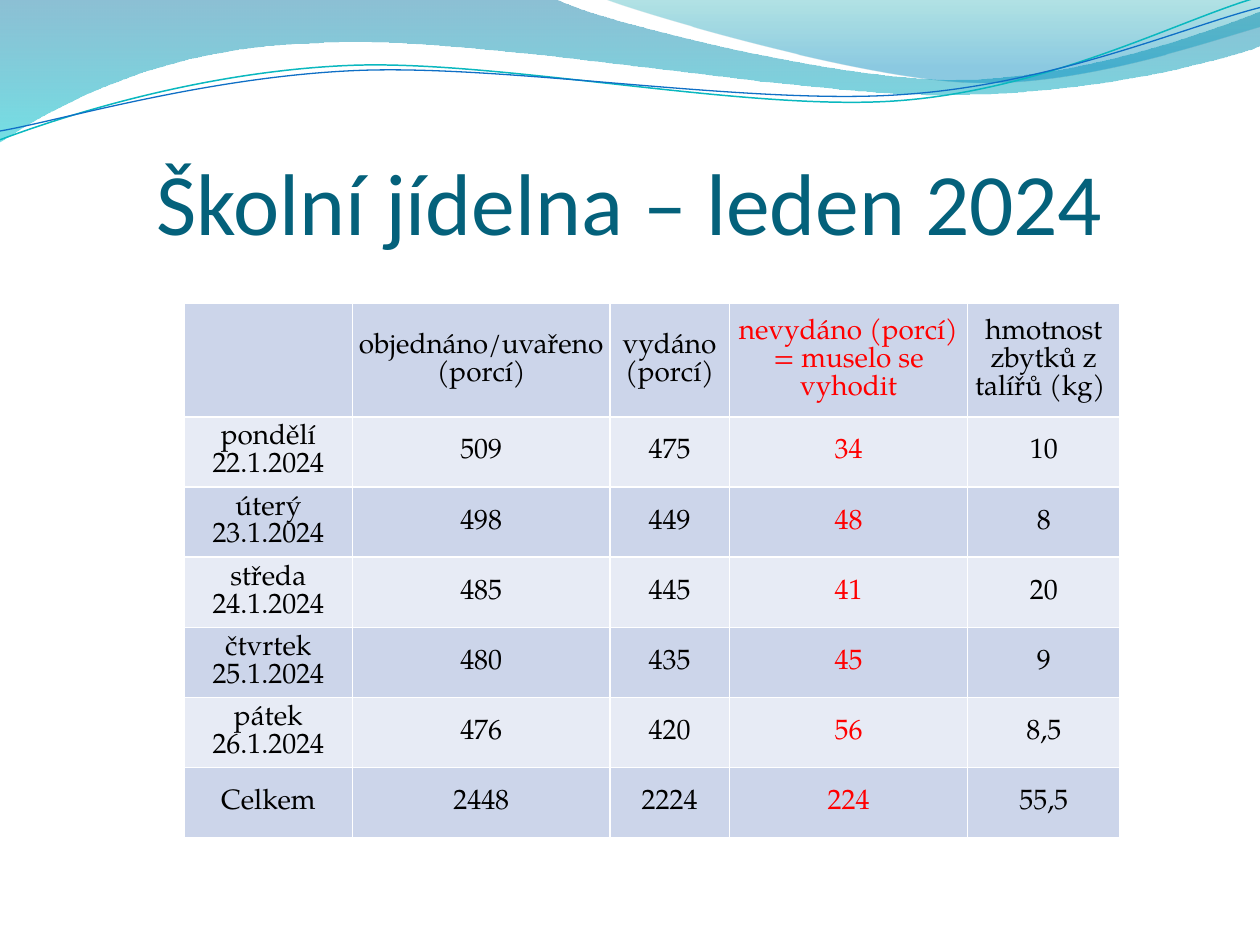
from dataclasses import dataclass

from lxml.etree import SubElement
from pptx import Presentation
from pptx.dml.color import RGBColor
from pptx.enum.text import MSO_ANCHOR as Anchor, PP_ALIGN as Align
from pptx.oxml.ns import qn
from pptx.util import Emu, Inches, Pt

# The slide is a grid of 10 columns by 7.5 rows of square modules.
MODULE = Inches(1)
SLIDE_COLS, SLIDE_ROWS = 10, 7.5

TITLE_FONT, TABLE_FONT = "Calibri", "TeX Gyre Pagella"
TITLE_COLOR, BLACK, RED, WHITE = "04617B", "000000", "FF0000", "FFFFFF"
BANDS = ("CCD5EA", "E7EBF5")

Point = tuple[float, float]


@dataclass(frozen=True)
class Stop:
    position: float
    color: str
    opacity: int


@dataclass(frozen=True)
class Wave:
    """Segments of one point are straight, those of three are cubic curves."""
    start: Point
    segments: tuple[tuple[Point, ...], ...]
    gradient: tuple[Stop, ...] = ()
    line_color: str = ""
    line_width: float = 0


WAVES = (
    Wave((0, 0),
         (((4.4, -0.01),),
          ((4.76, 0.17), (6.64, 0.63), (7.58, 0.63)),
          ((8.53, 0.63), (9.58, 0.26), (10, 0.09)),
          ((10.01, 0.36),),
          ((9.83, 0.44), (8.7, 0.76), (7.46, 0.75)),
          ((6.22, 0.75), (3.82, 0.28), (2.57, 0.34)),
          ((1.29, 0.36), (0.46, 0.83), (-0.01, 1.13)),
          ((0, 0),)),
         gradient=(Stop(0, "0074A1", 45), Stop(1, "00C6CF", 55))),
    Wave((4.79, -0.01),
         (((5.09, 0.11), (6.82, 0.62), (7.69, 0.65)),
          ((8.56, 0.69), (9.61, 0.32), (10, 0.21)),
          ((10, 0),),
          ((4.79, -0.01),)),
         gradient=(Stop(0, "00A1A9", 30), Stop(0.8, "008BBF", 45))),
    Wave((0, 1.11),
         (((0.48, 0.93), (1.58, 0.57), (2.77, 0.52)),
          ((3.95, 0.47), (5.93, 0.89), (7.13, 0.8)),
          ((8.33, 0.71), (9.38, 0.15), (9.98, -0.02))),
         line_color="0AB8BF", line_width=0.85),
    Wave((0, 1.04),
         (((0.47, 0.96), (1.64, 0.61), (2.83, 0.56)),
          ((4.03, 0.51), (5.97, 0.84), (7.17, 0.75)),
          ((8.36, 0.67), (9.41, 0.21), (10, 0.06))),
         line_color="0F6FC6", line_width=0.75),
)

COLUMN_WIDTHS = (1.34, 2.04, 0.95, 1.89, 1.21)
TABLE_HEIGHT, HEADER_HEIGHT = 4.24, 0.9
WASTED_COLUMN = 3
MEALS = (
    ("", "objednáno/uvařeno (porcí)", "vydáno (porcí)",
     "nevydáno (porcí) = muselo se vyhodit", "hmotnost zbytků z talířů (kg) "),
    ("pondělí 22.1.2024", "509", "475", "34", "10"),
    ("úterý\n23.1.2024", "498", "449", "48", "8"),
    ("středa\n24.1.2024", "485", "445", "41", "20"),
    ("čtvrtek 25.1.2024", "480", "435", "45", "9"),
    ("pátek\n26.1.2024", "476", "420", "56", "8,5"),
    ("Celkem", "2448", "2224", "224", "55,5"),
)


def modules(count: float) -> Emu:
    return Emu(round(count * MODULE))


def rgb(color: str) -> RGBColor:
    return RGBColor.from_string(color)


def bend(shape, segments: tuple[tuple[Point, ...], ...]) -> None:
    """Turn the straight segments that have control points into curves."""
    edges = list(shape._element.spPr.iter(qn("a:lnTo")))
    for edge, (*controls, _) in zip(edges, segments):
        if not controls:
            continue
        edge.tag = qn("a:cubicBezTo")
        for index, (x, y) in enumerate(controls):
            local = {"x": str(modules(x) - shape.left), "y": str(modules(y) - shape.top)}
            edge.insert(index, edge.makeelement(qn("a:pt"), local))


def fill_downwards(shape, stops: tuple[Stop, ...]) -> None:
    shape.fill.gradient()
    shape.fill.gradient_angle = 270
    for target, stop in zip(shape.fill.gradient_stops, stops):
        target.position = stop.position
        target.color.rgb = rgb(stop.color)
    for color, stop in zip(shape._element.spPr.iter(qn("a:srgbClr")), stops):
        SubElement(color, qn("a:alpha"), val=str(stop.opacity * 1000))


def draw_wave(slide, wave: Wave) -> None:
    builder = slide.shapes.build_freeform(*map(modules, wave.start))
    ends = [tuple(map(modules, segment[-1])) for segment in wave.segments]
    builder.add_line_segments(ends, close=bool(wave.gradient))
    shape = builder.convert_to_shape()
    bend(shape, wave.segments)
    shape.shadow.inherit = False
    if wave.gradient:
        fill_downwards(shape, wave.gradient)
        shape.line.fill.background()
    else:
        shape.fill.background()
        shape.line.color.rgb = rgb(wave.line_color)
        shape.line.width = Pt(wave.line_width)


def style_paragraph(paragraph, font: str, size: float, color: str) -> None:
    paragraph.alignment = Align.CENTER
    paragraph.font.name = font
    paragraph.font.size = Pt(size)
    paragraph.font.color.rgb = rgb(color)


def draw_title(slide, wording: str) -> None:
    frame = slide.shapes.add_textbox(*map(modules, (0.5, 0.76, 9, 1.25))).text_frame
    frame.word_wrap = True
    frame.vertical_anchor = Anchor.BOTTOM
    frame.margin_left = frame.margin_right = frame.margin_bottom = 0
    frame.margin_top = modules(0.05)
    frame.text = wording
    style_paragraph(frame.paragraphs[0], TITLE_FONT, 50, TITLE_COLOR)


def add_borders(cell) -> None:
    properties = cell._tc.get_or_add_tcPr()
    for index, side in enumerate(("a:lnL", "a:lnR", "a:lnT", "a:lnB")):
        border = properties.makeelement(qn(side), {"w": str(Pt(1))})
        properties.insert(index, border)
        solid = SubElement(border, qn("a:solidFill"))
        SubElement(solid, qn("a:srgbClr"), val=WHITE)


def write_cell(cell, wording: str, color: str, band: str) -> None:
    cell.fill.solid()
    cell.fill.fore_color.rgb = rgb(band)
    add_borders(cell)
    cell.vertical_anchor = Anchor.MIDDLE
    cell.margin_left = cell.margin_right = cell.margin_top = modules(0.01)
    cell.margin_bottom = 0
    cell.text = wording
    for paragraph in cell.text_frame.paragraphs:
        style_paragraph(paragraph, TABLE_FONT, 16, color)
        paragraph.line_spacing = Pt(16)


def draw_meals(slide) -> None:
    body_rows = len(MEALS) - 1
    heights = (HEADER_HEIGHT, *[(TABLE_HEIGHT - HEADER_HEIGHT) / body_rows] * body_rows)
    table = slide.shapes.add_table(
        len(heights), len(COLUMN_WIDTHS), modules(1.46), modules(2.41),
        modules(sum(COLUMN_WIDTHS)), modules(TABLE_HEIGHT)).table
    table.first_row = table.horz_banding = False
    for column, width in zip(table.columns, COLUMN_WIDTHS):
        column.width = modules(width)
    for r, (height, entries) in enumerate(zip(heights, MEALS)):
        table.rows[r].height = modules(height)
        for c, wording in enumerate(entries):
            color = RED if c == WASTED_COLUMN else BLACK
            write_cell(table.cell(r, c), wording, color, BANDS[r % 2])


def main() -> None:
    deck = Presentation()
    deck.slide_width, deck.slide_height = modules(SLIDE_COLS), modules(SLIDE_ROWS)
    slide = deck.slides.add_slide(deck.slide_layouts[6])
    for wave in WAVES:
        draw_wave(slide, wave)
    draw_title(slide, "Školní jídelna – leden 2024")
    draw_meals(slide)
    deck.save("out.pptx")


if __name__ == "__main__":
    main()
